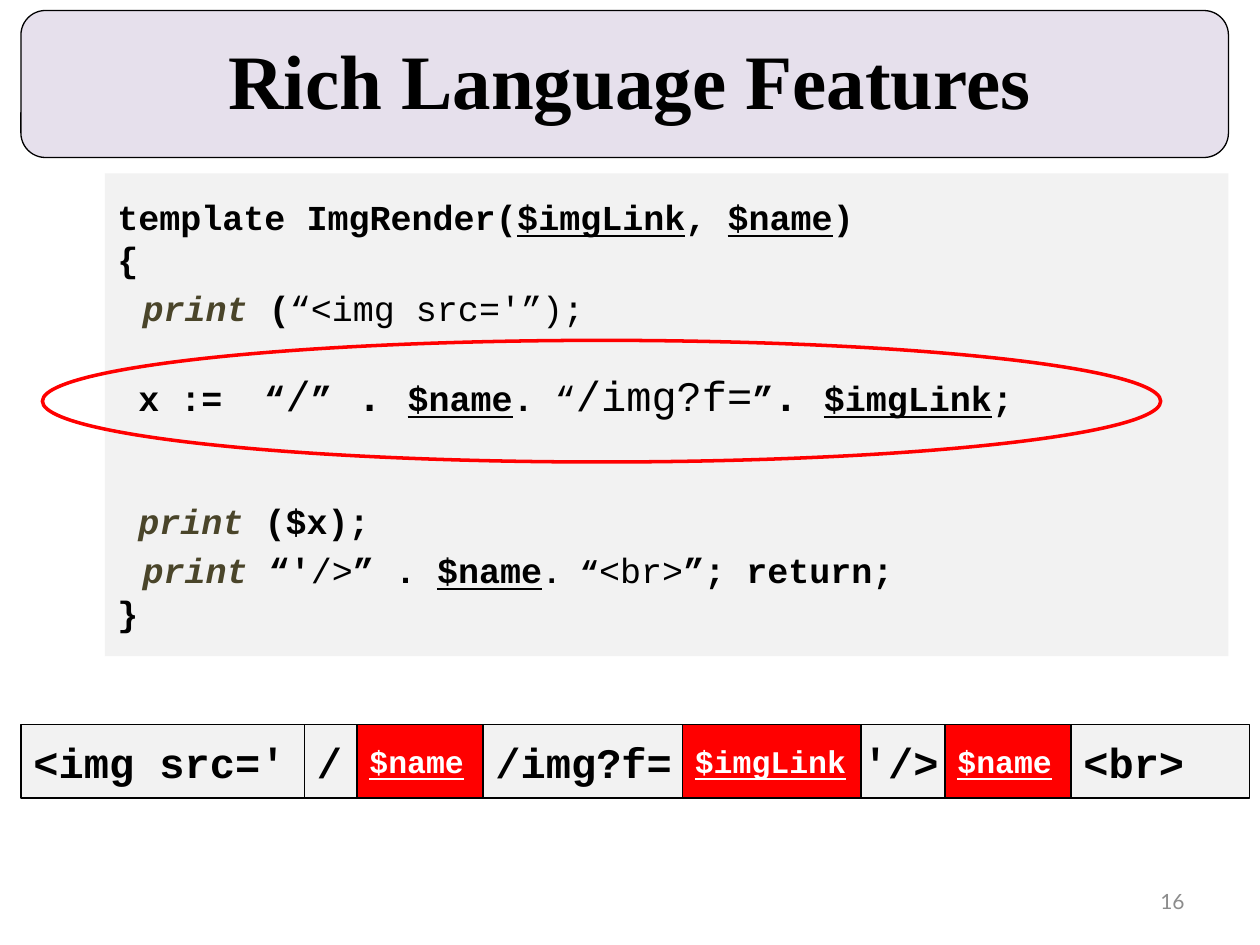
from pptx import Presentation
from pptx.dml.color import RGBColor
from pptx.enum.shapes import MSO_SHAPE
from pptx.enum.text import MSO_ANCHOR, PP_ALIGN
from pptx.util import Pt

RECT, ROUNDED, OVAL = MSO_SHAPE.RECTANGLE, MSO_SHAPE.ROUNDED_RECTANGLE, MSO_SHAPE.OVAL
MIDDLE = MSO_ANCHOR.MIDDLE
LEFT, CENTER, RIGHT = PP_ALIGN.LEFT, PP_ALIGN.CENTER, PP_ALIGN.RIGHT
MONO, GREY, RED, BLACK, WHITE, OLIVE = "Courier New", "F2F2F2", "FF0000", "000000", "FFFFFF", "4A452A"

TITLE = "Rich Language Features"
PAGE = "16"
PRINT = ("print", "bi", 20)

# (space before, [(text, style, size)])
CODE = [
    (0, [("template ImgRender(", "b", 20), ("$imgLink", "bu", 20), (", ", "b", 20),
         ("$name", "bu", 20), (")", "b", 20)]),
    (0, [("{", "b", 20)]),
    (0, [(" ", "b", 24), PRINT, (" (", "b", 20), ("“<img src='”);", "", 20)]),
    (22.66, [(" x :=  “", "b", 20), ("/", "", 24), ("”", "b", 20), (" . ", "b", 24),
             ("$name", "bu", 20), (". ", "b", 20), ("“", "", 20), ("/img?f=", "", 24),
             ("”", "b", 20), (". ", "b", 24), ("$imgLink", "bu", 20), (";", "b", 20)]),
    (45.32, [(" ", "b", 20), PRINT, (" ($x);", "b", 20)]),
    (0, [(" ", "b", 24), PRINT, (" “'", "b", 20), ("/>", "", 20), ("” . ", "b", 20),
         ("$name", "bu", 20), (". “", "b", 18), ("<br>", "", 20), ("”; return;", "b", 20)]),
    (0, [("}", "b", 20)]),
]
LITERALS = [("<img src='", 12, 162), ("/", 174, 30), ("/img?f=", 276, 120),
            ("'/>", 486, 66), ("<br>", 612, 102)]
VARIABLES = [("$name", 204, 72), ("$imgLink", 390, 102), ("$name", 540, 72)]


def rgb(value):
    return RGBColor.from_string(value)


def add_box(s, kind, left, top, width, height, fill=None, line=None, weight=1):
    sp = s.shapes.add_shape(kind, Pt(left), Pt(top), Pt(width), Pt(height))
    sp.shadow.inherit = False
    if fill:
        sp.fill.solid()
        sp.fill.fore_color.rgb = rgb(fill)
    else:
        sp.fill.background()
    if line:
        sp.line.color.rgb = rgb(line)
        sp.line.width = Pt(weight)
    else:
        sp.line.fill.background()
    return sp


def set_text(sp, text, font, size, color, align=LEFT, bold=False, underline=False):
    tf = sp.text_frame
    tf.word_wrap = True
    tf.vertical_anchor = MIDDLE
    p = tf.paragraphs[0]
    p.text = text
    p.alignment = align
    f = p.font
    f.name, f.size, f.bold, f.underline = font, Pt(size), bold, underline
    f.color.rgb = rgb(color)


def add_code(sp):
    tf = sp.text_frame
    tf.word_wrap = True
    tf.vertical_anchor = MIDDLE
    for i, (gap, runs) in enumerate(CODE):
        p = tf.paragraphs[0] if i == 0 else tf.add_paragraph()
        p.alignment = LEFT
        p.space_before = Pt(gap)
        p.font.name = MONO
        for text, style, size in runs:
            r = p.add_run()
            r.text = text
            r.font.size = Pt(size)
            r.font.bold = "b" in style
            r.font.italic = "i" in style
            r.font.underline = "u" in style
            r.font.color.rgb = rgb(OLIVE if "i" in style else BLACK)


def main():
    prs = Presentation()
    prs.slide_width, prs.slide_height = Pt(720), Pt(540)
    s = prs.slides.add_slide(prs.slide_layouts[5])

    banner = add_box(s, ROUNDED, 12, 6, 690, 84, "E6E0EC", BLACK, 0.75)
    title = s.shapes.title
    banner._element.addnext(title._element)
    title.left, title.top, title.width, title.height = Pt(36), Pt(0), Pt(648), Pt(90)
    set_text(title, TITLE, "Times New Roman", 44, BLACK, CENTER, bold=True)

    for cells, fill, color, size in ((LITERALS, GREY, BLACK, 24), (VARIABLES, RED, WHITE, 18)):
        for text, left, width in cells:
            sp = add_box(s, RECT, left, 414, width, 42, fill, BLACK)
            set_text(sp, text, MONO, size, color, bold=True, underline=fill == RED)

    page = s.shapes.add_textbox(Pt(516), Pt(500.5), Pt(168), Pt(28.75))
    set_text(page, PAGE, "Lato", 12, "8C8C8C", RIGHT)

    add_code(add_box(s, RECT, 60, 99, 642, 276, GREY))
    add_box(s, OVAL, 24.25, 194.5, 639, 69.5, line=RED, weight=2)
    prs.save("out.pptx")


if __name__ == "__main__":
    main()
